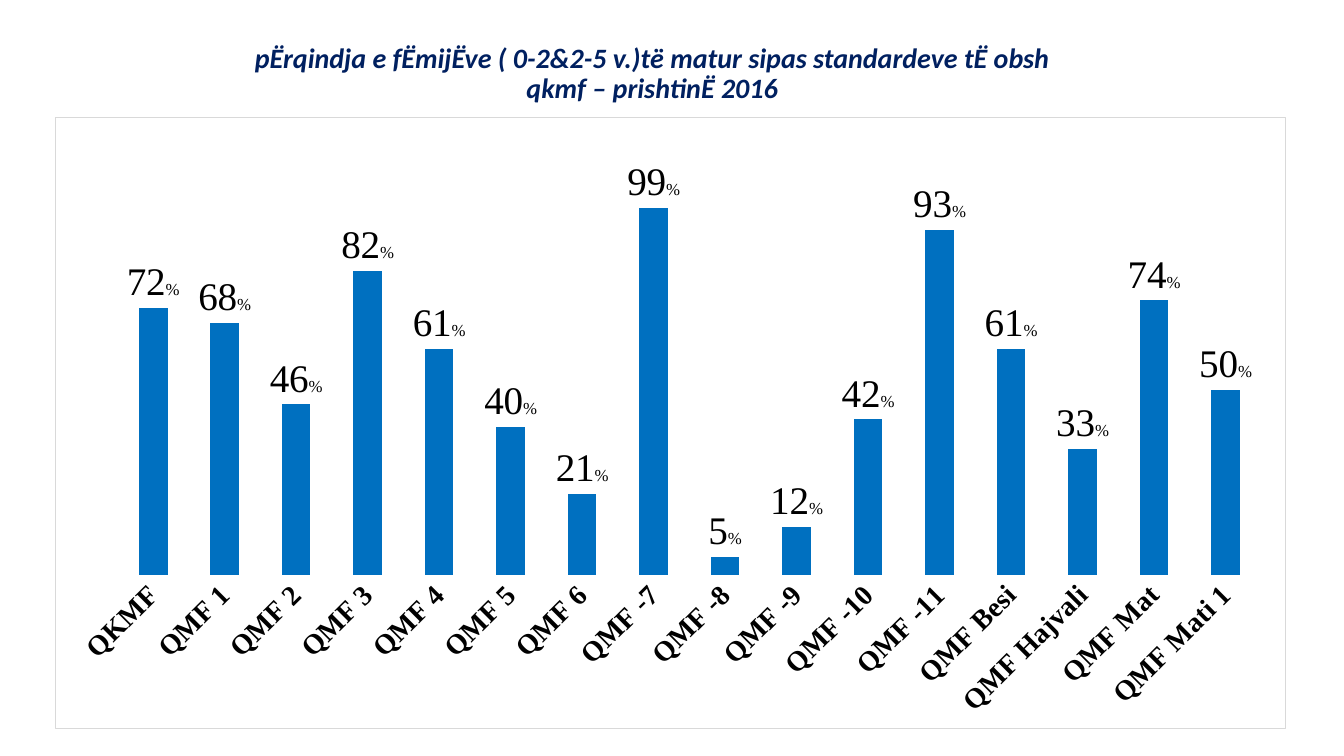
from lxml import etree
from pptx import Presentation
from pptx import util as u
from pptx.chart.data import CategoryChartData
from pptx.dml.color import RGBColor
from pptx.enum import chart as ch, text

TITLE = ["pËrqindja e fËmijËve ( 0-2&2-5 v.)të matur sipas standardeve tË obsh",
         "qkmf – prishtinË 2016"]
# centre, bar value, figure in its label
CENTRES = [
    ("QKMF", 72, 72), ("QMF 1", 68, 68), ("QMF 2", 46, 46), ("QMF 3", 82, 82),
    ("QMF 4", 61, 61), ("QMF 5", 40, 40), ("QMF 6", 22, 21), ("QMF -7", 99, 99),
    ("QMF -8", 5, 5), ("QMF -9", 13, 12), ("QMF -10", 42, 42), ("QMF -11", 93, 93),
    ("QMF Besi", 61, 61), ("QMF Hajvali", 34, 33), ("QMF Mat", 74, 74),
    ("QMF Mati 1", 50, 50),
]
TITLE_BOX = (0.23, 0.14, 12.48, 1.19)
CHART_BOX = (0.55, 1.16, 12.21, 6.07)
PLOT_AREA = {"x": 0.05, "y": 0.02, "w": 0.93, "h": 0.73}
NAVY, BLUE, BLACK, GREY = "002060", "0070C0", "000000", "D9D9D9"
SERIF = "Times New Roman"
NS = ('xmlns:c="http://schemas.openxmlformats.org/drawingml/2006/chart" '
      'xmlns:a="http://schemas.openxmlformats.org/drawingml/2006/main"')


def colour(target, value):
    target.rgb = RGBColor.from_string(value)


def style(font, shade, size, **formats):
    for name, value in formats.items():
        setattr(font, name, value)
    font.size = u.Pt(size)
    colour(font.color, shade)


def add_title(page):
    frame = page.shapes.add_textbox(*map(u.Inches, TITLE_BOX)).text_frame
    frame.word_wrap = True
    frame.vertical_anchor = text.MSO_ANCHOR.MIDDLE
    para = frame.paragraphs[0]
    para.alignment = text.PP_ALIGN.CENTER
    para.line_spacing = 0.9
    para.text = "\v".join(TITLE)
    for span in para.runs:
        style(span.font, NAVY, 20, name="Calibri", bold=True, italic=True)


def add_bars(page):
    data = CategoryChartData(number_format="0")
    data.categories = [name for name, _, _ in CENTRES]
    data.add_series("Series 1", [value for _, value, _ in CENTRES])
    chart = page.shapes.add_chart(ch.XL_CHART_TYPE.COLUMN_CLUSTERED,
                                  *map(u.Inches, CHART_BOX), data).chart
    chart.has_legend = chart.has_title = False
    style(chart.font, BLACK, 10, name="Calibri")

    plot = chart.plots[0]
    plot.vary_by_categories = False
    plot.gap_width, plot.overlap = 150, -25
    series = plot.series[0]
    series.format.fill.solid()
    colour(series.format.fill.fore_color, BLUE)
    for index, (_, _, figure) in enumerate(CENTRES):
        label = series.points[index].data_label
        para = label.text_frame.paragraphs[0]
        for wording, size in ((str(figure), 28), ("%", 12)):
            span = para.add_run()
            span.text = wording
            style(span.font, BLACK, size, name=SERIF, bold=False)
        label.position = ch.XL_LABEL_POSITION.OUTSIDE_END

    values = chart.value_axis
    values.minimum_scale, values.maximum_scale = 0, 120
    values.has_major_gridlines = values.visible = False
    names = chart.category_axis
    names.major_tick_mark = ch.XL_TICK_MARK.NONE
    names.format.line.fill.background()
    style(names.tick_labels.font, BLACK, 20, name=SERIF, bold=True)
    return chart


def finish_chart(chart):
    """Slant the centre names, fix the plot area and frame the chart."""
    space = chart._chartSpace
    slant = space.xpath(".//c:catAx/c:txPr/a:bodyPr")[0]
    slant.set("rot", str(-45 * 60000))
    slant.set("vert", "horz")

    area = space.xpath(".//c:plotArea")[0]
    for old in area.xpath("./c:layout"):
        area.remove(old)
    modes = "".join(f'<c:{k}Mode val="edge"/>' for k in "xy")
    sides = "".join(f'<c:{k} val="{v}"/>' for k, v in PLOT_AREA.items())
    area.insert(0, etree.fromstring(
        f'<c:layout {NS}><c:manualLayout><c:layoutTarget val="inner"/>'
        f'{modes}{sides}</c:manualLayout></c:layout>'))
    space.xpath("./c:chart")[0].addnext(etree.fromstring(
        f'<c:spPr {NS}><a:noFill/><a:ln w="{u.Pt(0.75)}"><a:solidFill>'
        f'<a:srgbClr val="{GREY}"/></a:solidFill></a:ln></c:spPr>'))


def main():
    deck = Presentation()
    deck.slide_width, deck.slide_height = u.Inches(13.33), u.Inches(7.5)
    page = deck.slides.add_slide(deck.slide_layouts[6])
    add_title(page)
    finish_chart(add_bars(page))
    deck.save("out.pptx")


if __name__ == "__main__":
    main()
